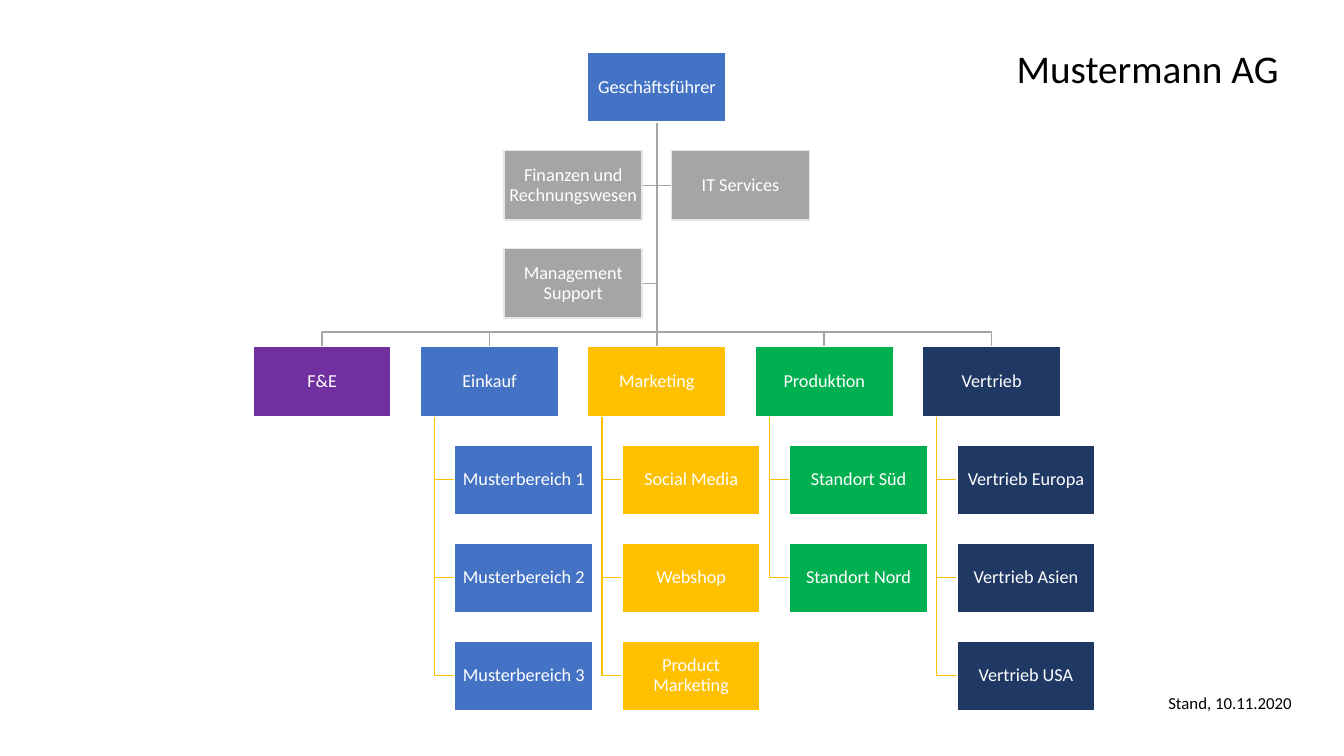
"""Build the organisation chart slide of Mustermann AG."""
import pptx
import pptx.dml.color
import pptx.enum.shapes
import pptx.enum.text
import pptx.oxml
import pptx.util
from pptx.util import Inches

TITLE = "Mustermann AG"
DATE_NOTE = "Stand, 10.11.2020"
DIRECTOR = "Geschäftsführer"
STAFF_UNITS = [
    ("Finanzen und Rechnungswesen", 1, -1),
    ("IT Services", 1, 1),
    ("Management Support", 2, -1),
]
DEPARTMENTS = [
    ("F&E", "purple", []),
    ("Einkauf", "blue", ["Musterbereich 1", "Musterbereich 2", "Musterbereich 3"]),
    ("Marketing", "yellow", ["Social Media", "Webshop", "Product Marketing"]),
    ("Produktion", "green", ["Standort Süd", "Standort Nord"]),
    ("Vertrieb", "navy", ["Vertrieb Europa", "Vertrieb Asien", "Vertrieb USA"]),
]
COLORS = {
    "black": "000000", "white": "FFFFFF", "gray": "A5A5A5", "light": "E7E7E7",
    "blue": "4472C4", "purple": "7030A0", "yellow": "FFC000",
    "green": "00B050", "navy": "203864",
}
FONT = "Calibri"
BOX_WIDTH, BOX_HEIGHT = 1.37, 0.69
FIRST_LEFT, COLUMN_STEP = 2.51, 1.66
FIRST_TOP, LAST_TOP, ROW_COUNT = 0.52, 6.36, 7
ROW_STEP = (LAST_TOP - FIRST_TOP) / (ROW_COUNT - 1)
DEPARTMENT_ROW = 3
TRUNK_INDENT, CHILD_INDENT = 0.14, 0.34
HALF_GAP = (COLUMN_STEP - BOX_WIDTH) / 2


def column_left(column):
    return FIRST_LEFT + column * COLUMN_STEP


def row_top(row):
    return FIRST_TOP + row * ROW_STEP


def row_middle(row):
    return row_top(row) + BOX_HEIGHT / 2


def rgb(name):
    return pptx.dml.color.RGBColor.from_string(COLORS[name])


def write(frame, text, size, color, alignment, spacing=None):
    paragraph = frame.paragraphs[0]
    paragraph.alignment = alignment
    paragraph.line_spacing = spacing
    run = paragraph.add_run()
    run.text = text
    run.font.size = pptx.util.Pt(size)
    run.font.name = FONT
    run.font.color.rgb = rgb(color)


def set_line(shape, color):
    shape.line.color.rgb = rgb(color)
    shape.line.width = pptx.util.Pt(1)


def add_branch(shapes, points, color):
    corners = [(Inches(x), Inches(y)) for x, y in points]
    builder = shapes.build_freeform(*corners[0])
    builder.add_line_segments(corners[1:], close=False)
    branch = builder.convert_to_shape()
    branch.fill.background()
    branch.shadow.inherit = False
    set_line(branch, color)


def add_stem(shapes, x, top, bottom):
    stem = shapes.add_connector(
        pptx.enum.shapes.MSO_CONNECTOR.STRAIGHT,
        Inches(x), Inches(top), Inches(x), Inches(bottom))
    set_line(stem, "gray")
    properties = stem.element.spPr
    properties.append(pptx.oxml.parse_xml(
        '<a:effectLst xmlns:a="http://schemas.openxmlformats.org/drawingml/2006/main"/>'))


def add_box(shapes, text, left, row, fill, outline="white"):
    box = shapes.add_shape(
        pptx.enum.shapes.MSO_SHAPE.RECTANGLE, Inches(left), Inches(row_top(row)),
        Inches(BOX_WIDTH), Inches(BOX_HEIGHT))
    box.shadow.inherit = False
    box.fill.solid()
    box.fill.fore_color.rgb = rgb(fill)
    set_line(box, outline)
    frame = box.text_frame
    frame.word_wrap = True
    frame.vertical_anchor = pptx.enum.text.MSO_ANCHOR.MIDDLE
    frame.margin_left = frame.margin_right = Inches(0.01)
    frame.margin_top = frame.margin_bottom = Inches(0.01)
    write(frame, text, 13, "white", pptx.enum.text.PP_ALIGN.CENTER, 0.9)


def add_lines(shapes, center):
    start = row_top(0) + BOX_HEIGHT
    department_top = row_top(DEPARTMENT_ROW)
    bus = department_top - HALF_GAP
    for name, row, side in STAFF_UNITS:
        y = row_middle(row)
        add_branch(shapes, [(center, start), (center, y),
                            (center + side * HALF_GAP, y)], "gray")
    for column, (name, fill, units) in enumerate(DEPARTMENTS):
        left = column_left(column)
        x = left + BOX_WIDTH / 2
        if column == len(DEPARTMENTS) // 2:
            add_stem(shapes, center, start, department_top)
        else:
            add_branch(shapes, [(center, start), (center, bus), (x, bus),
                                (x, department_top)], "gray")
        trunk = left + TRUNK_INDENT
        for row in range(DEPARTMENT_ROW + 1, DEPARTMENT_ROW + 1 + len(units)):
            y = row_middle(row)
            add_branch(shapes, [(trunk, department_top + BOX_HEIGHT), (trunk, y),
                                (left + CHILD_INDENT, y)], "yellow")


def add_boxes(shapes, center):
    add_box(shapes, DIRECTOR, center - BOX_WIDTH / 2, 0, "blue")
    for column, (name, fill, units) in enumerate(DEPARTMENTS):
        left = column_left(column)
        add_box(shapes, name, left, DEPARTMENT_ROW, fill)
        for row, unit in enumerate(units, DEPARTMENT_ROW + 1):
            add_box(shapes, unit, left + CHILD_INDENT, row, fill)
    for name, row, side in STAFF_UNITS:
        left = center + side * COLUMN_STEP / 2 - BOX_WIDTH / 2
        add_box(shapes, name, left, row, "gray", "light")


def main():
    presentation = pptx.Presentation()
    presentation.slide_width = Inches(13.33)
    presentation.slide_height = Inches(7.5)
    slide = presentation.slides.add_slide(presentation.slide_layouts[5])
    shapes = slide.shapes

    title = shapes.title
    title.left, title.top = Inches(0.42), Inches(0.4)
    title.width, title.height = Inches(12.36), Inches(0.56)
    title.text_frame.auto_size = pptx.enum.text.MSO_AUTO_SIZE.NONE
    title.text_frame.vertical_anchor = pptx.enum.text.MSO_ANCHOR.BOTTOM
    right = pptx.enum.text.PP_ALIGN.RIGHT
    write(title.text_frame, TITLE, 28, "black", right, 0.9)

    center = column_left(len(DEPARTMENTS) // 2) + BOX_WIDTH / 2
    add_lines(shapes, center)
    add_boxes(shapes, center)

    note = shapes.add_textbox(Inches(9.03), Inches(6.82), Inches(3.88), Inches(0.3))
    note.text_frame.word_wrap = True
    write(note.text_frame, DATE_NOTE, 12, "black", right)
    presentation.save("out.pptx")


if __name__ == "__main__":
    main()
